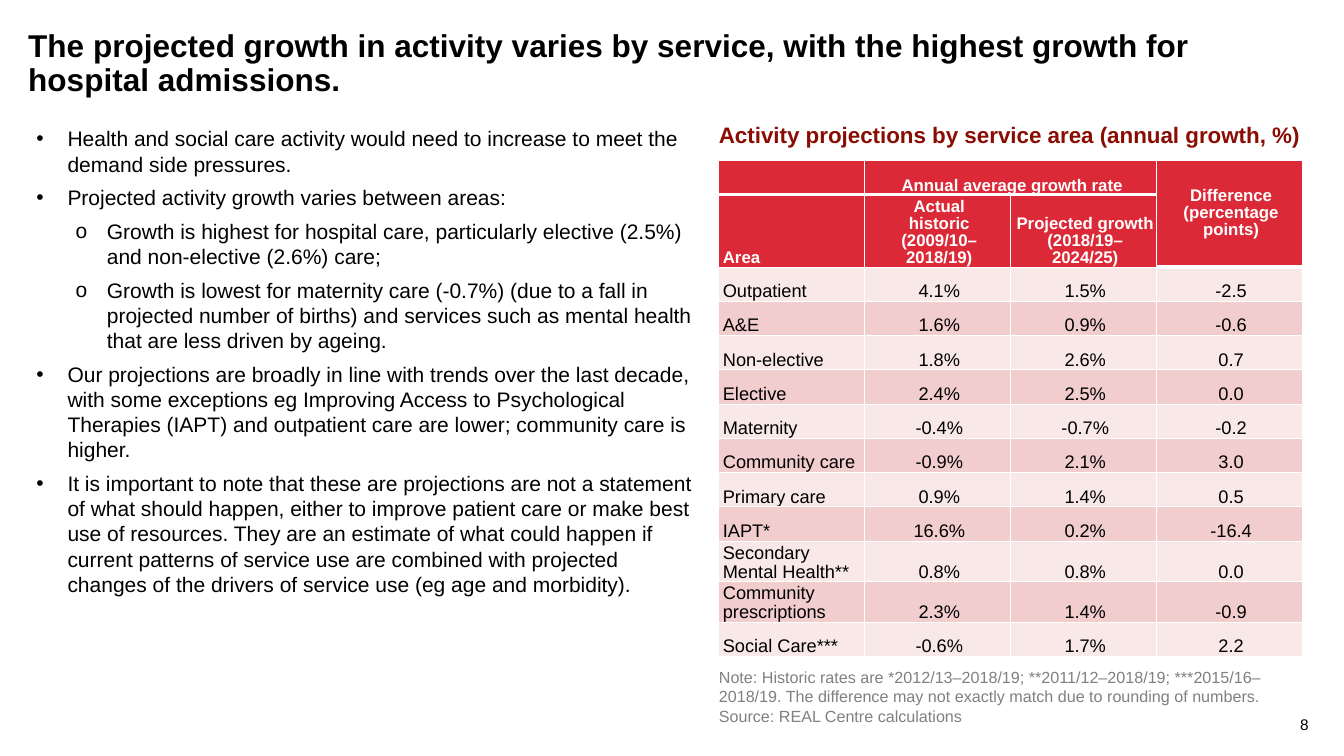
from pptx import Presentation
from pptx import util as u
from pptx.dml.color import RGBColor
from pptx.enum import text as t
from pptx.oxml.ns import qn
from lxml import etree

BLACK = RGBColor(0x00, 0x00, 0x00)
WHITE = RGBColor(0xFF, 0xFF, 0xFF)
GREY = RGBColor(0x80, 0x80, 0x80)
MAROON = RGBColor(0x89, 0x0D, 0x03)
RED = RGBColor(0xDC, 0x29, 0x37)
PALE = RGBColor(0xF9, 0xE8, 0xE8)
PINK = RGBColor(0xF2, 0xCD, 0xCE)

LEFT, MID = t.PP_ALIGN.LEFT, t.PP_ALIGN.CENTER
TITLE = ("The projected growth in activity varies by service, with the highest "
         "growth for hospital admissions.")
POINTS = [
    (0, "Health and social care activity would need to increase to meet the "
        "demand side pressures."),
    (0, "Projected activity growth varies between areas:"),
    (1, "Growth is highest for hospital care, particularly elective (2.5%) and "
        "non-elective (2.6%) care;"),
    (1, "Growth is lowest for maternity care (-0.7%) (due to a fall in projected "
        "number of births) and services such as mental health that are less "
        "driven by ageing."),
    (0, "Our projections are broadly in line with trends over the last decade, "
        "with some exceptions eg Improving Access to Psychological Therapies "
        "(IAPT) and outpatient care are lower; community care is higher."),
    (0, "It is important to note that these are projections are not a statement "
        "of what should happen, either to improve patient care or make best use "
        "of resources. They are an estimate of what could happen if current "
        "patterns of service use are combined with projected changes of the "
        "drivers of service use (eg age and morbidity)."),
]
NOTE = [
    "Note: Historic rates are *2012/13–2018/19; **2011/12–2018/19; "
    "***2015/16–2018/19. The difference may not exactly match due to rounding "
    "of numbers.",
    "Source: REAL Centre calculations",
]
HEAD = [
    ["", "Annual average growth rate", "",
     "Difference\n(percentage\vpoints)"],
    ["Area", "Actual\vhistoric\n(2009/10–2018/19)",
     "Projected growth\n(2018/19–2024/25)", ""],
]
ROWS = [
    ["Outpatient", "4.1%", "1.5%", "-2.5"],
    ["A&E", "1.6%", "0.9%", "-0.6"],
    ["Non-elective", "1.8%", "2.6%", "0.7"],
    ["Elective", "2.4%", "2.5%", "0.0"],
    ["Maternity", "-0.4%", "-0.7%", "-0.2"],
    ["Community care", "-0.9%", "2.1%", "3.0"],
    ["Primary care", "0.9%", "1.4%", "0.5"],
    ["IAPT*", "16.6%", "0.2%", "-16.4"],
    ["Secondary Mental Health**", "0.8%", "0.8%", "0.0"],
    ["Community prescriptions", "2.3%", "1.4%", "-0.9"],
    ["Social Care***", "-0.6%", "1.7%", "2.2"],
]


def place(shape, left, top, width, height):
    shape.left, shape.top = u.Inches(left), u.Inches(top)
    shape.width, shape.height = u.Inches(width), u.Inches(height)


def write(para, words, size=15, color=BLACK, bold=False, align=LEFT,
          line=1.0, after=0):
    para.text = words
    para.alignment = align
    para.line_spacing = line
    para.space_before, para.space_after = u.Pt(0), u.Pt(after)
    for run in para.runs:
        font = run.font
        font.name, font.size, font.bold = "Arial", u.Pt(size), bold
        font.color.rgb = color


def fill(frame, lines, **look):
    for i, words in enumerate(lines):
        para = frame.add_paragraph() if i else frame.paragraphs[0]
        write(para, words, **look)


def flush(frame):
    frame.word_wrap = True
    frame.auto_size = t.MSO_AUTO_SIZE.NONE
    frame.vertical_anchor = t.MSO_ANCHOR.TOP
    frame.margin_left = frame.margin_right = 0
    frame.margin_top = frame.margin_bottom = 0


def label(slide, lines, box, **look):
    frame = slide.shapes.add_textbox(*map(u.Inches, box)).text_frame
    flush(frame)
    fill(frame, lines, **look)


def bullet(para, level):
    props = para._p.get_or_add_pPr()
    props.set("marL", str(u.Inches(0.7 if level else 0.31)))
    props.set("indent", str(u.Inches(-0.31)))
    etree.SubElement(props, qn("a:buFont"), typeface="Arial")
    etree.SubElement(props, qn("a:buChar"), char="o" if level else "•")


def points(body):
    place(body, 0.26, 1.2, 6.8, 5.07)
    frame = body.text_frame
    frame.word_wrap = True
    frame.auto_size = t.MSO_AUTO_SIZE.SHAPE_TO_FIT_TEXT
    frame.vertical_anchor = t.MSO_ANCHOR.TOP
    fill(frame, [words for _, words in POINTS], after=6)
    for para, (level, _) in zip(frame.paragraphs, POINTS):
        bullet(para, level)


def rule(row, col):
    return 3 if row == 0 or (row, col) == (1, 3) else 1


def border(cell, sides):
    props = cell._tc.get_or_add_tcPr()
    for side, width in sides.items():
        line = etree.SubElement(props, qn("a:ln" + side), w=str(u.Pt(width)))
        paint = etree.SubElement(line, qn("a:solidFill"))
        etree.SubElement(paint, qn("a:srgbClr"), val=str(WHITE))


def style(cell, row, col):
    top = rule(row - 1, col) if row else 1
    border(cell, {"L": 1, "R": 1, "T": top, "B": rule(row, col)})
    cell.fill.solid()
    cell.fill.fore_color.rgb = RED if row < 2 else (PALE, PINK)[row % 2]
    cell.margin_left, cell.margin_right = u.Inches(0.04), u.Inches(0.01)
    cell.margin_top = cell.margin_bottom = 0
    cell.vertical_anchor = t.MSO_ANCHOR.BOTTOM


def rates(slide):
    data = HEAD + ROWS
    box = map(u.Inches, (7.13, 1.59, 5.79, 4.88))
    table = slide.shapes.add_table(len(data), 4, *box).table
    for col in table.columns:
        col.width = u.Inches(5.79 / 4)
    for row in table.rows:
        row.height = u.Inches(0.34)
    table.rows[1].height = u.Inches(0.62)
    table.cell(0, 1).merge(table.cell(0, 2))
    table.cell(0, 3).merge(table.cell(1, 3))
    for r, row in enumerate(data):
        head = r < 2
        for c, words in enumerate(row):
            cell = table.cell(r, c)
            style(cell, r, c)
            if words:
                fill(cell.text_frame, words.split("\n"),
                     size=12 if head else 13, bold=head,
                     color=WHITE if head else BLACK,
                     align=MID if c else LEFT,
                     line=0.9 if head else 0.93)
    table.cell(0, 3).vertical_anchor = t.MSO_ANCHOR.MIDDLE


def main():
    deck = Presentation()
    deck.slide_width, deck.slide_height = u.Inches(13.33), u.Inches(7.5)
    slide = deck.slides.add_slide(deck.slide_layouts[1])
    title = slide.shapes.title
    place(title, 0.28, 0.3, 12.56, 0.67)
    flush(title.text_frame)
    fill(title.text_frame, [TITLE], size=22.5, bold=True, line=0.9)
    points(slide.placeholders[1])
    label(slide, ["Activity projections by service area (annual growth, %)"],
          (7.13, 1.2, 6.15, 0.33), size=16, color=MAROON, bold=True)
    rates(slide)
    label(slide, NOTE, (7.13, 6.62, 5.79, 0.7), size=11.5, color=GREY)
    label(slide, ["8"], (12.59, 7.09, 0.39, 0.2), size=11,
          align=t.PP_ALIGN.RIGHT)
    deck.save("out.pptx")


if __name__ == "__main__":
    main()
